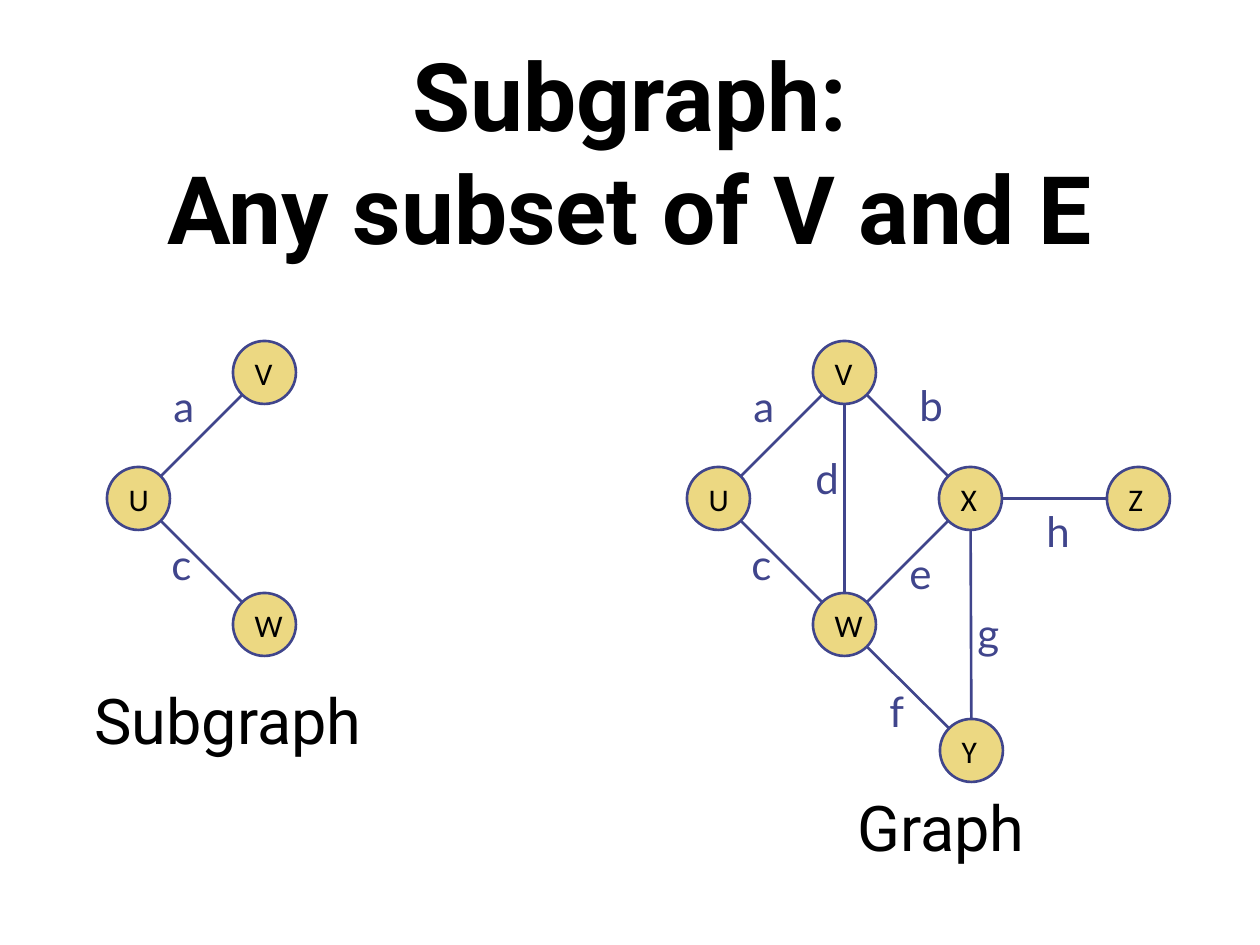
"""Build a slide that shows a subgraph beside its full graph."""
from math import hypot

from pptx import Presentation
from pptx.dml.color import RGBColor
from pptx.enum.shapes import MSO_CONNECTOR, MSO_SHAPE
from pptx.enum.text import MSO_ANCHOR, MSO_AUTO_SIZE, PP_ALIGN
from pptx.oxml import parse_xml
from pptx.oxml.ns import nsdecls
from pptx.util import Pt

PX = 914400 // 126
COLORS = {"text": "000000", "edge": "40458C", "node": "ECD882"}
NODE_SIZE = 63
EDGE_GAP = 32
GRAPH_SHIFT = 580


def px(*lengths):
    return [round(length * PX) for length in lengths]


def write(shape, text, size, font, color="text", bold=False, align=PP_ALIGN.LEFT,
          anchor=MSO_ANCHOR.TOP, wrap=False, grow=False):
    frame = shape.text_frame
    frame.word_wrap = wrap
    frame.vertical_anchor = anchor
    frame.auto_size = MSO_AUTO_SIZE.SHAPE_TO_FIT_TEXT if grow else MSO_AUTO_SIZE.NONE
    paragraph = frame.paragraphs[0]
    paragraph.text = text
    paragraph.alignment = align
    for run in paragraph.runs:
        run.font.size = Pt(size)
        run.font.name = font
        run.font.bold = bold
        run.font.color.rgb = RGBColor.from_string(COLORS[color])


presentation = Presentation()
presentation.slide_width, presentation.slide_height = px(1260, 945)
slide = presentation.slides.add_slide(presentation.slide_layouts[6])

title = slide.shapes.add_textbox(*px(63, 71, 1134, 158))
write(title, "Subgraph:\nAny subset of V and E", 54, "Roboto", bold=True,
      align=PP_ALIGN.CENTER, anchor=MSO_ANCHOR.MIDDLE, wrap=True)

subgraph_nodes = {"U": (107, 467), "V": (233, 341), "W": (233, 593)}
subgraph_edges = [("V", "U", "a", 161, 374, 48), ("W", "U", "c", 159, 532, 45)]

graph_nodes = {name: (left + GRAPH_SHIFT, top)
               for name, (left, top) in subgraph_nodes.items()}
graph_nodes.update({"X": (939, 467), "Z": (1107, 467), "Y": (940, 719)})
graph_edges = [(start, end, label, left + GRAPH_SHIFT, top, width)
               for start, end, label, left, top, width in subgraph_edges]
graph_edges += [
    ("V", "X", "b", 907, 373, 49),
    ("W", "X", "e", 897, 541, 48),
    ("V", "W", "d", 803, 446, 49),
    ("W", "Y", "f", 877, 679, 39),
    ("X", "Y", "g", 965, 601, 49),
    ("X", "Z", "h", 1034, 499, 49),
]

for nodes, edges in ((subgraph_nodes, subgraph_edges), (graph_nodes, graph_edges)):
    for name, (left, top) in nodes.items():
        node = slide.shapes.add_shape(MSO_SHAPE.OVAL, *px(left, top, NODE_SIZE, NODE_SIZE))
        node.shadow.inherit = False
        node.fill.solid()
        node.fill.fore_color.rgb = RGBColor.from_string(COLORS["node"])
        node.line.color.rgb = RGBColor.from_string(COLORS["edge"])
        node.line.width = Pt(1.5)
        write(node, name, 18, "Calibri", anchor=MSO_ANCHOR.MIDDLE)

    for start, end, label, left, top, width in edges:
        start_x, start_y = [place + NODE_SIZE / 2 for place in nodes[start]]
        end_x, end_y = [place + NODE_SIZE / 2 for place in nodes[end]]
        distance = hypot(end_x - start_x, end_y - start_y)
        gap_x = EDGE_GAP * (end_x - start_x) / distance
        gap_y = EDGE_GAP * (end_y - start_y) / distance
        edge = slide.shapes.add_connector(
            MSO_CONNECTOR.STRAIGHT,
            *px(start_x + gap_x, start_y + gap_y, end_x - gap_x, end_y - gap_y))
        edge.line.color.rgb = RGBColor.from_string(COLORS["edge"])
        edge.line.width = Pt(1.5)
        edge._element.spPr.append(parse_xml(f"<a:effectLst {nsdecls('a')}/>"))
        edge_label = slide.shapes.add_textbox(*px(left, top, width, 63))
        write(edge_label, label, 24, "Lato", color="edge", grow=True)

for caption, left, top, width in (("Graph", 845, 782, 203), ("Subgraph", 82, 675, 302)):
    caption_box = slide.shapes.add_textbox(*px(left, top, width, 89))
    write(caption_box, caption, 36, "Roboto", grow=True)

presentation.save("out.pptx")
